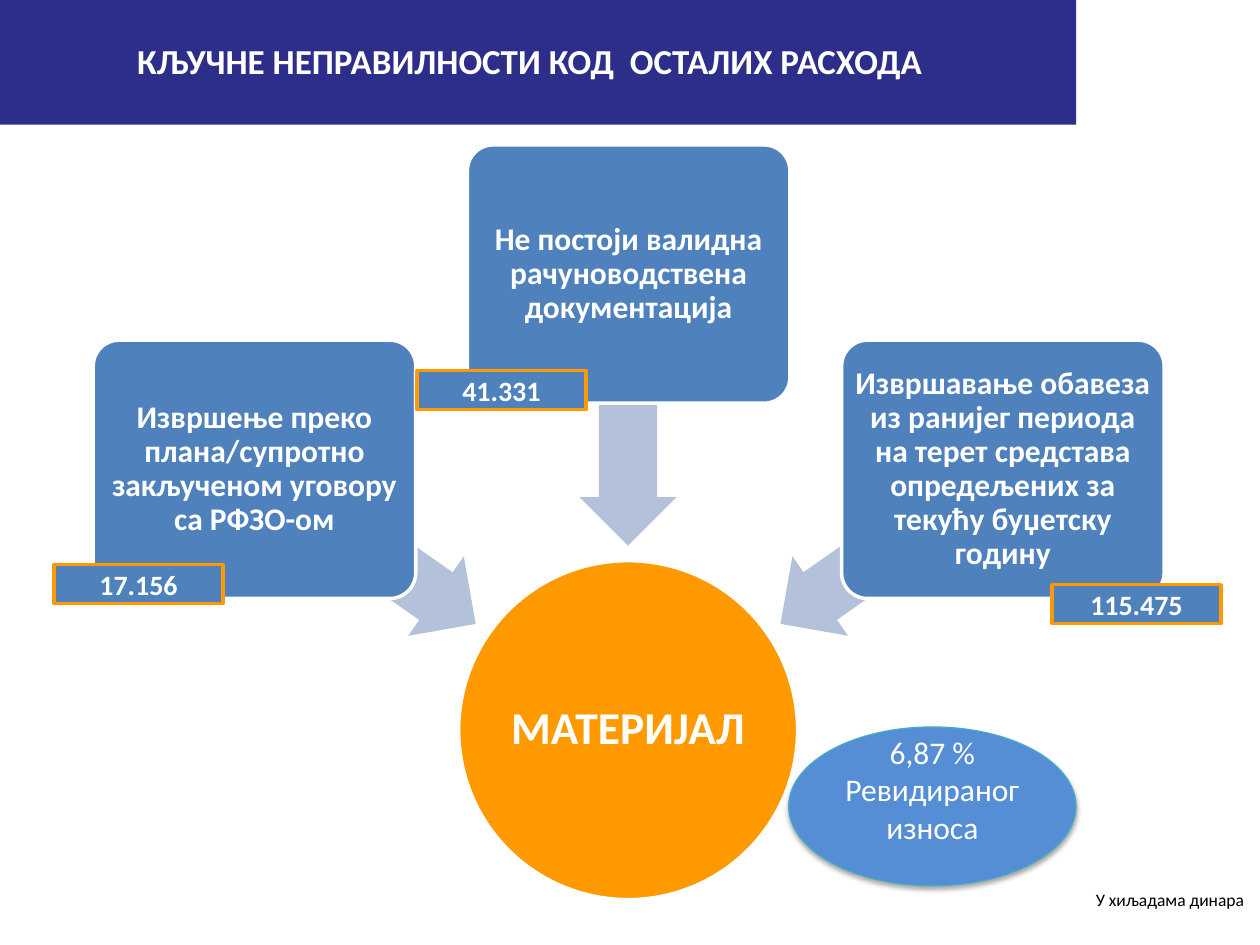
from lxml import etree
from pptx import Presentation
from pptx.dml.color import RGBColor
from pptx.enum.shapes import MSO_SHAPE
from pptx.enum.text import MSO_ANCHOR, PP_ALIGN
from pptx.oxml.ns import nsdecls
from pptx.util import Inches, Pt

COLORS = {
    "navy": "2D2D8A",
    "orange": "FF9900",
    "blue": "4F81BD",
    "pale": "B3C1DB",
    "bright": "558ED5",
    "teal": "46AAC5",
    "white": "FFFFFF",
    "black": "000000",
}


def add_block(kind, box, fill, line=None, line_width=2):
    shape = slide.shapes.add_shape(kind, *[Inches(length) for length in box])
    shape.shadow.inherit = False
    shape.fill.solid()
    shape.fill.fore_color.rgb = RGBColor.from_string(COLORS[fill])
    if line:
        shape.line.color.rgb = RGBColor.from_string(COLORS[line])
        shape.line.width = Pt(line_width)
    else:
        shape.line.fill.background()
    return shape


def write_text(shape, text, size, bold=True, color="white", align=PP_ALIGN.CENTER, spacing=None, inset=None):
    frame = shape.text_frame
    frame.word_wrap = True
    if inset is not None:
        frame.margin_left = frame.margin_right = Inches(inset)
        frame.margin_top = frame.margin_bottom = Inches(inset)
    paragraph = frame.paragraphs[0]
    paragraph.alignment = align
    if spacing:
        paragraph.line_spacing = spacing
    run = paragraph.add_run()
    run.text = text
    run.font.name = "Calibri"
    run.font.size = Pt(size)
    run.font.bold = bold
    run.font.color.rgb = RGBColor.from_string(COLORS[color])


presentation = Presentation()
presentation.slide_width = Inches(10)
presentation.slide_height = Inches(7.5)
slide = presentation.slides.add_slide(presentation.slide_layouts[5])

title = slide.shapes.title
title.left, title.top = Inches(0), Inches(-0.03)
title.width, title.height = Inches(8.54), Inches(1.02)
title.fill.solid()
title.fill.fore_color.rgb = RGBColor.from_string(COLORS["navy"])
title.text_frame.vertical_anchor = MSO_ANCHOR.MIDDLE
title.text_frame.margin_right = Inches(0.23)
write_text(title, "КЉУЧНЕ НЕПРАВИЛНОСТИ КОД  ОСТАЛИХ РАСХОДА", 20)

hub = add_block(MSO_SHAPE.OVAL, (3.64, 4.45, 2.69, 2.69), "orange", "white")
write_text(hub, "МАТЕРИЈАЛ", 26, spacing=0.9, inset=0.02)

causes = [
    ("Извршење преко плана/супротно закљученом уговору са РФЗО-ом", 0.74, 2.7, 1.82, 3.95, 215),
    ("Не постоји валидна рачуноводствена документација", 3.71, 1.15, 3.91, 2.87, 270),
    (
        "Извршавање обавеза из ранијег периода на терет средстава опредељених за текућу буџетску годину",
        6.68, 2.7, 6, 3.95, 325,
    ),
]
for text, left, top, arrow_left, arrow_top, angle in causes:
    arrow = add_block(MSO_SHAPE.LEFT_ARROW, (arrow_left, arrow_top, 2.15, 0.77), "pale")
    arrow.adjustments[0] = 0.6
    arrow.adjustments[1] = 0.5
    arrow.rotation = angle
    cause = add_block(MSO_SHAPE.ROUNDED_RECTANGLE, (left, top, 2.56, 2.05), "blue", "white")
    cause.adjustments[0] = 0.1
    write_text(cause, text, 18, spacing=0.9, inset=0.04)

for amount, left, top in [("17.156", 0.43, 4.48), ("41.331", 3.31, 2.94), ("115.475", 8.35, 4.64)]:
    label = add_block(MSO_SHAPE.RECTANGLE, (left, top, 1.34, 0.31), "blue", "orange")
    write_text(label, amount, 16)

unit_note = slide.shapes.add_textbox(Inches(7.94), Inches(7.01), Inches(2.03), Inches(0.27))
write_text(unit_note, "У хиљадама динара", 10, bold=False, color="black", align=PP_ALIGN.RIGHT)
unit_note.text_frame.margin_right = Inches(0.1)

share = add_block(MSO_SHAPE.OVAL, (6.26, 5.77, 2.28, 1.26), "bright", "teal", 0.75)
write_text(share, "6,87 % Ревидираног износа", 18, bold=False)
share.text_frame.margin_bottom = Inches(0.32)
effects = share.element.spPr.find("{*}effectLst")
effects.append(etree.fromstring(
    f'<a:outerShdw {nsdecls("a")} blurRad="{Pt(3.1)}" dist="{Pt(1.8)}" dir="5400000" rotWithShape="0">'
    f'<a:srgbClr val="{COLORS["black"]}"><a:alpha val="35000"/></a:srgbClr></a:outerShdw>'
))

presentation.save("out.pptx")
